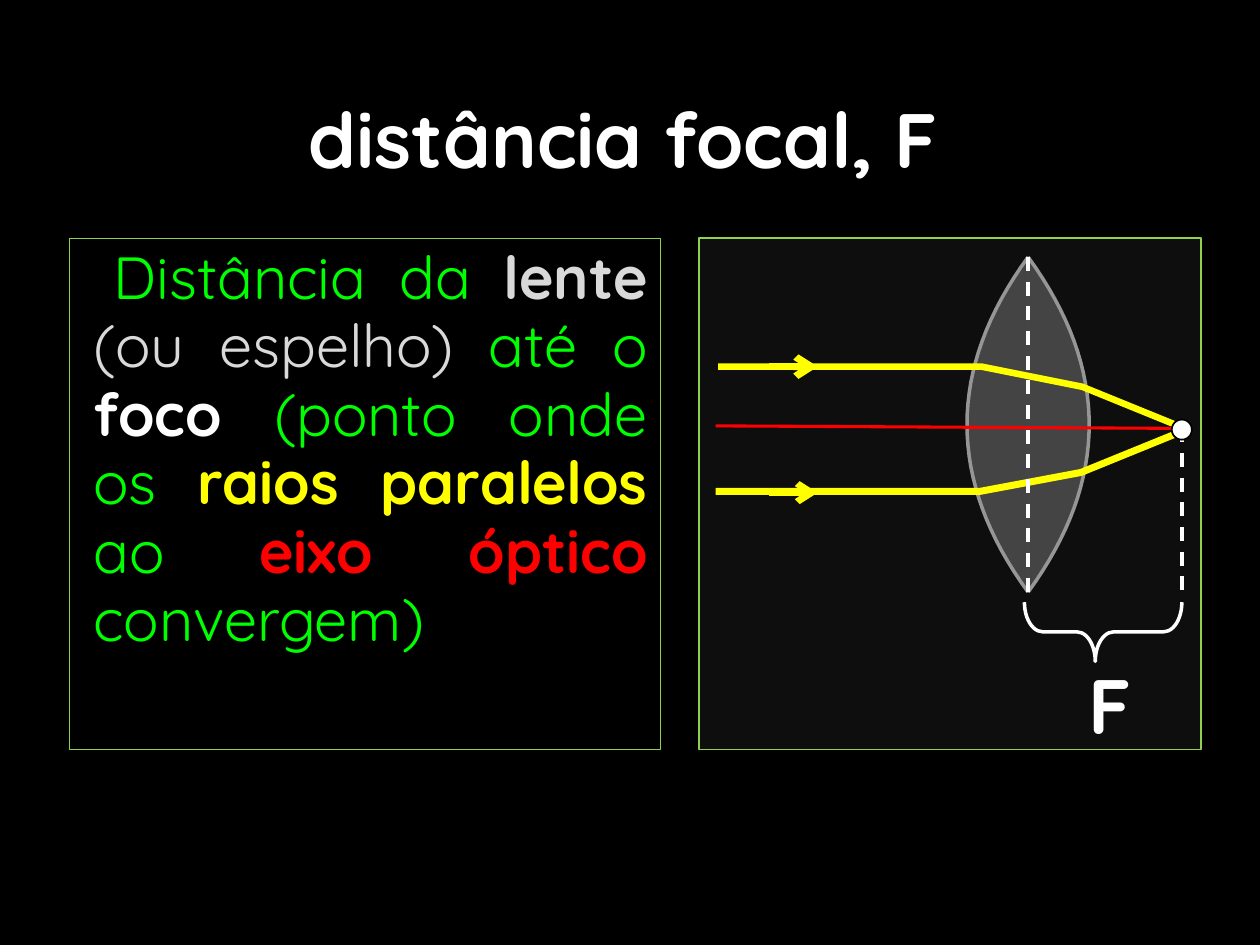
from dataclasses import dataclass

from lxml import etree
from pptx import Presentation
from pptx import util as u
from pptx.dml.color import RGBColor
from pptx.enum import dml, shapes, text
from pptx.oxml import ns


@dataclass
class Theme:
    font: str = "Quicksand"
    heading_size: int = 44
    body_size: int = 34
    indent_size: int = 32
    black: str = "000000"
    white: str = "FFFFFF"
    green: str = "00FF00"
    yellow: str = "FFFF00"
    red: str = "FF0000"
    light_gray: str = "D9D9D9"
    frame: str = "92D050"
    panel: str = "707070"
    lens: str = "808080"
    lens_edge: str = "969696"


theme = Theme()


def style_run(run, size, color, bold=False):
    run.font.name = theme.font
    run.font.size = u.Pt(size)
    run.font.bold = bold
    run.font.color.rgb = RGBColor.from_string(color)


def style_shape(shape, line, width, fill=None, opacity=100):
    """Set line and fill, and take the theme shadow away."""
    shape.line.color.rgb = RGBColor.from_string(line)
    shape.line.width = u.Pt(width)
    if shape.shape_type == shapes.MSO_SHAPE_TYPE.LINE:
        properties = shape._element.spPr
        etree.SubElement(properties, ns.qn("a:effectLst"))
        return
    shape.shadow.inherit = False
    if fill is None:
        shape.fill.background()
        return
    shape.fill.solid()
    shape.fill.fore_color.rgb = RGBColor.from_string(fill)
    if opacity < 100:
        color = shape._element.spPr.find(ns.qn("a:solidFill"))[0]
        etree.SubElement(color, ns.qn("a:alpha"), val=str(opacity * 1000))


presentation = Presentation()
presentation.slide_width = u.Inches(10)
presentation.slide_height = u.Inches(7.5)
slide = presentation.slides.add_slide(presentation.slide_layouts[1])
slide.background.fill.solid()
slide.background.fill.fore_color.rgb = RGBColor.from_string(theme.black)
title, body = slide.placeholders

# Title
title.left, title.top = u.Inches(0.7), u.Inches(0.47)
title.width, title.height = u.Inches(8.5), u.Inches(1.25)
title.text_frame.text = "distância focal, F"
title.text_frame.auto_size = text.MSO_AUTO_SIZE.NONE
title.text_frame.vertical_anchor = text.MSO_ANCHOR.MIDDLE
paragraph = title.text_frame.paragraphs[0]
paragraph.alignment = text.PP_ALIGN.CENTER
style_run(paragraph.runs[0], theme.heading_size, theme.white, True)

# Definition
body.left, body.top = u.Inches(0.55), u.Inches(1.89)
body.width, body.height = u.Inches(4.69), u.Inches(4.06)
body.line.color.rgb = RGBColor.from_string(theme.frame)
body.line.width = u.Pt(0.75)
body.text_frame.auto_size = text.MSO_AUTO_SIZE.NONE
paragraph = body.text_frame.paragraphs[0]
paragraph.alignment = text.PP_ALIGN.JUSTIFY
paragraph.line_spacing = 0.96
paragraph.space_before = u.Pt(0)
paragraph_properties = paragraph._p.get_or_add_pPr()
paragraph_properties.set("marL", str(u.Inches(0.09)))
paragraph_properties.set("indent", str(-u.Inches(0.09)))
etree.SubElement(paragraph_properties, ns.qn("a:buNone"))
definition = [
    (" ", theme.green, False),
    ("Distância da ", theme.green, False),
    ("lente", theme.light_gray, True),
    (" (ou espelho) ", theme.light_gray, False),
    ("até o ", theme.green, False),
    ("foco ", theme.white, True),
    ("(ponto onde os ", theme.green, False),
    ("raios paralelos ", theme.yellow, True),
    ("ao ", theme.green, False),
    ("eixo óptico ", theme.red, True),
    ("convergem)", theme.green, False),
]
for wording, color, bold in definition:
    run = paragraph.add_run()
    run.text = wording
    size = theme.body_size if wording.strip() else theme.indent_size
    style_run(run, size, color, bold)

# Diagram panel
panel = slide.shapes.add_shape(
    shapes.MSO_SHAPE.RECTANGLE,
    u.Inches(5.55), u.Inches(1.89), u.Inches(3.98), u.Inches(4.06))
style_shape(panel, theme.frame, 1, theme.panel, 13)

# Lens: two mirrored halves, each a parabola through both tips
lens_x, lens_top, lens_bottom, bulge = 8.16, 2.04, 4.7, 0.485
steps = 32
for side in (-1, 1):
    outline = []
    for step in range(steps + 1):
        t = step / steps
        outline.append((u.Inches(lens_x + side * bulge * 4 * t * (1 - t)),
                        u.Inches(lens_top + (lens_bottom - lens_top) * t)))
    builder = slide.shapes.build_freeform(*outline[0])
    builder.add_line_segments(outline[1:], close=False)
    style_shape(builder.convert_to_shape(), theme.lens_edge, 2, theme.lens, 48)

# Light rays bent by the lens
focus_x, focus_y = 9.38, 3.4
rays = [
    ([(5.7, 2.91), (7.79, 2.91), (8.59, 3.07), (9.45, 3.42)], 3.75),
    ([(5.68, 3.9), (7.78, 3.9), (8.58, 3.75), (9.44, 3.4)], 4),
]
for points, width in rays:
    corners = [(u.Inches(x), u.Inches(y)) for x, y in points]
    builder = slide.shapes.build_freeform(*corners[0])
    builder.add_line_segments(corners[1:], close=False)
    style_shape(builder.convert_to_shape(), theme.yellow, width)

# Optical axis, lens plane, focal plane and ray directions
lines = [
    (5.68, 3.38, focus_x, focus_y, theme.red, 1.75, None),
    (lens_x, lens_top, lens_x, lens_bottom, theme.white, 2, "dash"),
    (focus_x, focus_y, focus_x, lens_bottom, theme.white, 2, "dash"),
    (6.1, 2.91, 6.49, 2.91, theme.yellow, 4, "arrow"),
    (6.1, 3.91, 6.49, 3.91, theme.yellow, 3.75, "arrow"),
]
for x1, y1, x2, y2, color, width, ending in lines:
    line = slide.shapes.add_connector(
        shapes.MSO_CONNECTOR.STRAIGHT,
        u.Inches(x1), u.Inches(y1), u.Inches(x2), u.Inches(y2))
    style_shape(line, color, width)
    if ending == "dash":
        line.line.dash_style = dml.MSO_LINE.DASH
    elif ending == "arrow":
        etree.SubElement(line.line._get_or_add_ln(), ns.qn("a:tailEnd"), type="arrow")

# Focus
focus = slide.shapes.add_shape(
    shapes.MSO_SHAPE.OVAL,
    u.Inches(focus_x - 0.08), u.Inches(focus_y - 0.07), u.Inches(0.16), u.Inches(0.16))
style_shape(focus, theme.black, 1, theme.white)

# Focal distance brace and label
brace = slide.shapes.add_shape(
    shapes.MSO_SHAPE.RIGHT_BRACE,
    u.Inches(8.52), u.Inches(4.39), u.Inches(0.47), u.Inches(1.25))
brace.rotation = 90
brace.adjustments[0] = 0.31
brace.adjustments[1] = 0.55
style_shape(brace, theme.white, 2)

label = slide.shapes.add_textbox(
    u.Inches(8.54), u.Inches(5.17), u.Inches(0.5), u.Inches(0.84))
label.text_frame.text = "F"
label.text_frame.word_wrap = False
label.text_frame.auto_size = text.MSO_AUTO_SIZE.SHAPE_TO_FIT_TEXT
paragraph = label.text_frame.paragraphs[0]
paragraph.alignment = text.PP_ALIGN.CENTER
style_run(paragraph.runs[0], theme.heading_size, theme.white, True)

presentation.save("out.pptx")
